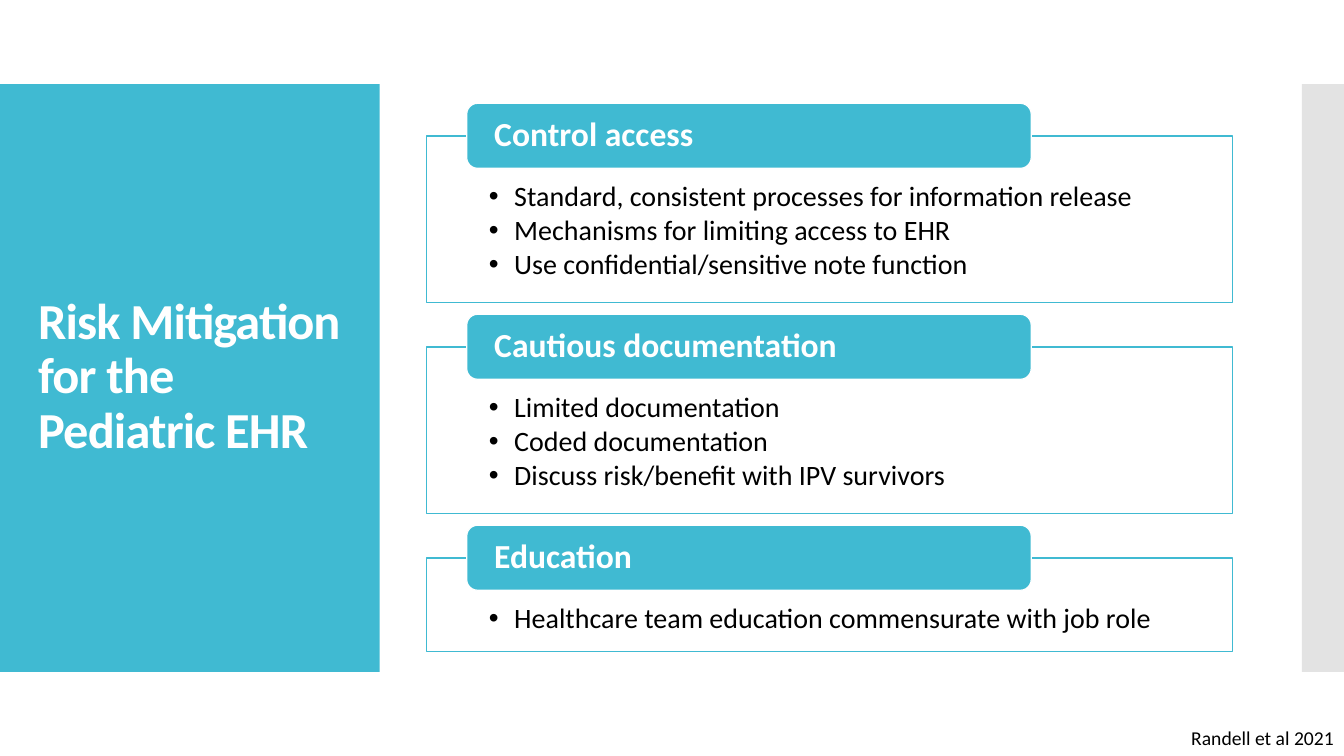
from dataclasses import dataclass

from lxml import etree
from pptx import Presentation
from pptx.dml.color import RGBColor
from pptx.enum.shapes import MSO_SHAPE
from pptx.enum.text import MSO_ANCHOR, MSO_AUTO_SIZE, PP_ALIGN
from pptx.oxml.ns import qn
from pptx.util import Pt

RECTANGLE, ROUNDED = MSO_SHAPE.RECTANGLE, MSO_SHAPE.ROUNDED_RECTANGLE
TOP, MIDDLE = MSO_ANCHOR.TOP, MSO_ANCHOR.MIDDLE
LEFT, RIGHT = PP_ALIGN.LEFT, PP_ALIGN.RIGHT
NO_AUTOFIT = MSO_AUTO_SIZE.NONE

TITLE = "Risk Mitigation for the Pediatric EHR"
SECTIONS = [
    ("Control access", [
        "Standard, consistent processes for information release",
        "Mechanisms for limiting access to EHR",
        "Use confidential/sensitive note function",
    ]),
    ("Cautious documentation", [
        "Limited documentation",
        "Coded documentation",
        "Discuss risk/benefit with IPV survivors",
    ]),
    ("Education", ["Healthcare team education commensurate with job role"]),
]
CITATION = "Randell et al 2021"


@dataclass(frozen=True)
class Theme:
    font: str = "Calibri"
    accent: str = "40BAD2"
    edge: str = "C8C8C8"
    white: str = "FFFFFF"
    black: str = "000000"
    title_size: int = 36
    header_size: int = 24
    list_size: int = 20
    citation_size: int = 14
    line_width: float = 0.85


THEME = Theme()
SLIDE_WIDTH, SLIDE_HEIGHT = 960, 540
BAND_TOP, BAND_HEIGHT = 60, 420
PANEL_WIDTH, EDGE_WIDTH = 271.2, 30
BOX_LEFT, BOX_WIDTH, FIRST_BOX_TOP = 304.6, 576, 97.2
BOX_BASE_HEIGHT, LINE_HEIGHT, BOX_GAP = 41, 25.9, 32
HEADER_LEFT, HEADER_WIDTH, HEADER_HEIGHT = 333.4, 403.2, 46.4
HEADER_RISE = 23.4
BULLET_INDENT = 18


def add_panel(slide, kind, bounds, fill, line=None, opacity=100):
    shape = slide.shapes.add_shape(kind, *map(Pt, bounds))
    shape.shadow.inherit = False
    shape.fill.solid()
    shape.fill.fore_color.rgb = RGBColor.from_string(fill)
    if opacity < 100:
        color = shape.element.spPr.find(qn("a:solidFill"))[0]
        etree.SubElement(color, qn("a:alpha"), val=str(opacity * 1000))
    if line:
        shape.line.color.rgb = RGBColor.from_string(line)
        shape.line.width = Pt(THEME.line_width)
    else:
        shape.line.fill.background()
    return shape


def add_bullet(paragraph):
    properties = paragraph._p.get_or_add_pPr()
    properties.set("marL", str(Pt(BULLET_INDENT)))
    properties.set("indent", str(-Pt(BULLET_INDENT)))
    etree.SubElement(properties, qn("a:buFont"), typeface="Arial")
    etree.SubElement(properties, qn("a:buChar"), char="•")


def write_text(shape, lines, *, size, color, bold=False, align=LEFT, anchor=TOP,
               insets=(7.2, 3.6, 7.2, 3.6), line_spacing=0.9, space_after=0,
               tracking=0, bullets=False):
    frame = shape.text_frame
    frame.word_wrap = True
    frame.auto_size = NO_AUTOFIT
    frame.vertical_anchor = anchor
    (frame.margin_left, frame.margin_top,
     frame.margin_right, frame.margin_bottom) = map(Pt, insets)
    for index, line in enumerate(lines):
        paragraph = frame.add_paragraph() if index else frame.paragraphs[0]
        paragraph.alignment = align
        paragraph.line_spacing = line_spacing
        paragraph.space_before = Pt(0)
        paragraph.space_after = Pt(space_after)
        if bullets:
            add_bullet(paragraph)
        run = paragraph.add_run()
        run.text = line
        run.font.name = THEME.font
        run.font.size = Pt(size)
        run.font.bold = bold
        run.font.color.rgb = RGBColor.from_string(color)
        if tracking:
            run.font._element.set("spc", str(round(tracking * 100)))


def add_title(slide):
    title = slide.shapes.title
    title.left, title.top, title.width, title.height = map(Pt, (20, 88.6, 232, 362))
    write_text(title, [TITLE], size=THEME.title_size, color=THEME.white, bold=True,
               anchor=MIDDLE, tracking=-0.6)
    panel = add_panel(slide, RECTANGLE, (0, BAND_TOP, PANEL_WIDTH, BAND_HEIGHT),
                      THEME.accent)
    title.element.addprevious(panel.element)


def add_section(slide, heading, items, top):
    height = BOX_BASE_HEIGHT + LINE_HEIGHT * len(items)
    box = add_panel(slide, RECTANGLE, (BOX_LEFT, top, BOX_WIDTH, height),
                    THEME.white, THEME.accent, opacity=90)
    write_text(box, items, size=THEME.list_size, color=THEME.black,
               insets=(44.7, 33.3, 44.7, 11.4), space_after=2.7, bullets=True)
    header = add_panel(slide, ROUNDED,
                       (HEADER_LEFT, top - HEADER_RISE, HEADER_WIDTH, HEADER_HEIGHT),
                       THEME.accent, THEME.white)
    write_text(header, [heading], size=THEME.header_size, color=THEME.white,
               bold=True, anchor=MIDDLE, insets=(17.4, 0, 17.4, 0))
    return top + height + BOX_GAP


def main():
    presentation = Presentation()
    presentation.slide_width = Pt(SLIDE_WIDTH)
    presentation.slide_height = Pt(SLIDE_HEIGHT)
    slide = presentation.slides.add_slide(presentation.slide_layouts[5])
    add_title(slide)
    add_panel(slide, RECTANGLE,
              (SLIDE_WIDTH - EDGE_WIDTH, BAND_TOP, EDGE_WIDTH, BAND_HEIGHT),
              THEME.edge, opacity=50)
    top = FIRST_BOX_TOP
    for heading, items in SECTIONS:
        top = add_section(slide, heading, items, top)
    citation = slide.shapes.add_textbox(*map(Pt, (777.6, 515, 182.4, 24.2)))
    write_text(citation, [CITATION], size=THEME.citation_size, color=THEME.black,
               align=RIGHT, line_spacing=1.0)
    presentation.save("out.pptx")


if __name__ == "__main__":
    main()
